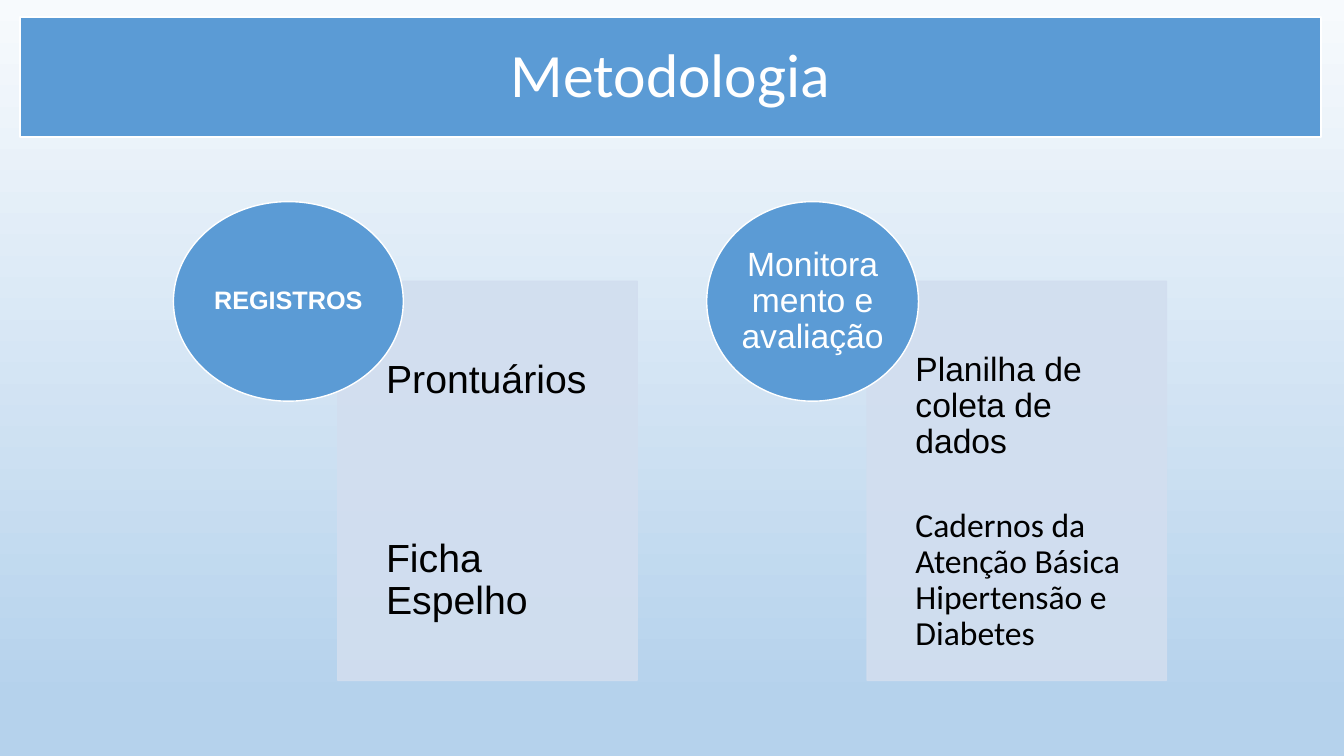
from dataclasses import dataclass

from lxml import etree
from pptx import Presentation
from pptx import util as u
from pptx.dml.color import RGBColor
from pptx.enum import shapes, text
from pptx.oxml import ns


@dataclass(frozen=True)
class Theme:
    blue: str = "5B9BD5"
    pale: str = "D2DEEF"
    white: str = "FFFFFF"
    black: str = "000000"
    sky_top: str = "F7FAFD"
    sky_bottom: str = "B5D2EC"
    title_size: int = 44
    large: int = 28
    medium: int = 24
    small: int = 18


theme = Theme()


def add_box(kind, place, fill, line, line_width, opacity=100):
    box = page.shapes.add_shape(kind, *[u.Inches(length) for length in place])
    box.shadow.inherit = False
    box.fill.solid()
    box.fill.fore_color.rgb = RGBColor.from_string(fill)
    box.line.color.rgb = RGBColor.from_string(line)
    box.line.width = u.Pt(line_width)
    if opacity < 100:
        for color in box.fill._xPr.iter(ns.qn("a:srgbClr")):
            etree.SubElement(color, ns.qn("a:alpha"), val=str(opacity * 1000))
    return box


def write(box, words, font, size, color, align, insets, bold=False):
    frame = box.text_frame
    frame.text = words
    frame.word_wrap = True
    frame.vertical_anchor = text.MSO_ANCHOR.MIDDLE
    frame.margin_left, frame.margin_top, frame.margin_right, frame.margin_bottom = [
        u.Inches(inset) for inset in insets
    ]
    para = frame.paragraphs[0]
    para.alignment = align
    para.line_spacing = 0.9
    span = para.runs[0]
    span.font.name = font
    span.font.size = u.Pt(size)
    span.font.bold = bold
    span.font.color.rgb = RGBColor.from_string(color)


deck = Presentation()
deck.slide_width = u.Inches(13.33)
deck.slide_height = u.Inches(7.5)
page = deck.slides.add_slide(deck.slide_layouts[6])

sky = page.background.fill
sky.gradient()
sky.gradient_angle = 270
for stop, color, position in zip(
    sky.gradient_stops, (theme.sky_top, theme.sky_bottom), (0, 0.93)
):
    stop.color.rgb = RGBColor.from_string(color)
    stop.position = position

center, left = text.PP_ALIGN.CENTER, text.PP_ALIGN.LEFT
rectangle, ellipse = shapes.MSO_SHAPE.RECTANGLE, shapes.MSO_SHAPE.OVAL

title = add_box(rectangle, (0.2, 0.17, 12.9, 1.19), theme.blue, theme.white, 1.5)
write(title, "Metodologia", "Calibri", theme.title_size, theme.white, center,
      (0.1, 0.05, 0.1, 0.05))

panel_width, panel_height, panel_top = 2.97, 1.98, 2.79
text_indent = 0.48
groups = [
    (3.35, 0.22, (1.72, 2.28), ("REGISTROS", theme.small, True), [
        ("Prontuários", "Arial", theme.large, 0.22),
        ("Ficha Espelho", "Arial", theme.large, 0.22),
    ]),
    (8.6, 0.19, (7.01, 2.1), ("Monitoramento e avaliação", theme.medium, False), [
        ("Planilha de coleta de dados", "Arial", theme.medium, 0.7),
        ("Cadernos da Atenção Básica Hipertensão e Diabetes", "Calibri",
         theme.medium, 0.19),
    ]),
]

for panel_left, inset, (circle_left, circle_width), heading, items in groups:
    for row, (words, font, size, top_inset) in enumerate(items):
        panel = add_box(
            rectangle,
            (panel_left, panel_top + row * panel_height, panel_width, panel_height),
            theme.pale, theme.pale, 1, opacity=90,
        )
        write(panel, words, font, size, theme.black, left,
              (text_indent, top_inset, inset, inset))
    circle = add_box(ellipse, (circle_left, 2, circle_width, panel_height),
                     theme.blue, theme.white, 1)
    label, size, bold = heading
    write(circle, label, "Arial", size, theme.white, center, (0, 0, 0, 0), bold)

deck.save("out.pptx")
